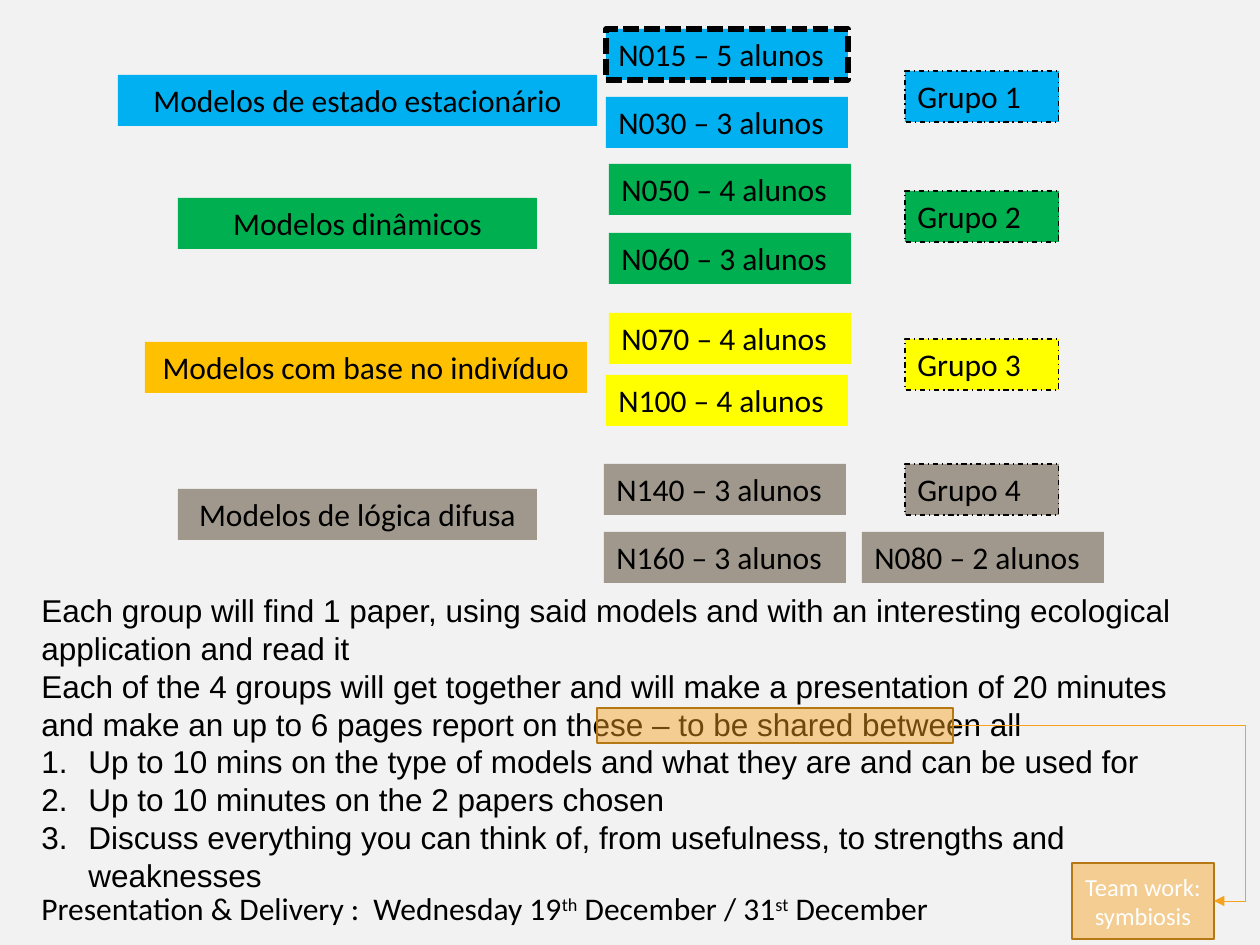
from lxml.etree import SubElement
from pptx import Presentation
from pptx.dml.color import RGBColor
from pptx.enum.dml import MSO_LINE
from pptx.enum.shapes import MSO_CONNECTOR, MSO_SHAPE
from pptx.enum.text import MSO_ANCHOR, MSO_AUTO_SIZE, PP_ALIGN
from pptx.oxml.ns import qn
from pptx.util import Emu, Pt

PX = 914400 // 126
BLUE, GREEN, YELLOW, ORANGE, GREY = "00B0F0", "00B050", "FFFF00", "FFC000", "A0988C"
BLACK, WHITE, AMBER, BROWN = "000000", "FFFFFF", "F6A21D", "B67815"
LABEL_H, CLASS_W, GROUP_X, GROUP_W = 51, 242, 905, 154

# Content: text, left, top, width, fill
models = [
    ("Modelos de estado estacionário", 118, 75, 479, BLUE),
    ("Modelos dinâmicos", 178, 198, 359, GREEN),
    ("Modelos com base no indivíduo", 145, 342, 442, ORANGE),
    ("Modelos de lógica difusa", 178, 489, 359, GREY),
]
# Content: text, left, top, fill
classes = [
    ("N030 – 3 alunos", 606, 97, BLUE),
    ("N050 – 4 alunos", 609, 164, GREEN),
    ("N060 – 3 alunos", 609, 233, GREEN),
    ("N070 – 4 alunos", 609, 313, YELLOW),
    ("N100 – 4 alunos", 606, 375, YELLOW),
    ("N140 – 3 alunos", 604, 464, GREY),
    ("N160 – 3 alunos", 604, 532, GREY),
    ("N080 – 2 alunos", 862, 532, GREY),
]
lead_class = ("N015 – 5 alunos", 606, 29, BLUE)
# Content: top, fill
groups = [(71, BLUE), (191, GREEN), (339, YELLOW), (464, GREY)]

instructions = [
    "Each group will find 1 paper, using said models and with an interesting "
    "ecological application and read it",
    "Each of the 4 groups will get together and will make a presentation of 20 minutes "
    "and make an up to 6 pages report on these – to be shared between all",
]
steps = [
    "Up to 10 mins on the type of models and what they are and can be used for",
    "Up to 10 minutes on the 2 papers chosen",
    "Discuss everything you can think of, from usefulness, to strengths and weaknesses",
]
# Content: text, superscript
delivery = [
    ("Presentation & Delivery :  Wednesday 19", False), ("th", True),
    (" December / 31", False), ("st", True), (" December", False),
]


def px(*lengths):
    return [Emu(length * PX) for length in lengths]


def color(value):
    return RGBColor.from_string(value)


def add_run(paragraph, text, font="Calibri", size=18, ink=BLACK):
    run = paragraph.add_run()
    run.text = text
    run.font.name, run.font.size = font, Pt(size)
    run.font.color.rgb = color(ink)
    return run


def add_box(place, fill, text="", align=PP_ALIGN.LEFT, line=None, width=1, dash=None,
            anchor=MSO_ANCHOR.TOP, size=18, ink=BLACK):
    box = slide.shapes.add_shape(MSO_SHAPE.RECTANGLE, *px(*place))
    box.shadow.inherit = False
    box.fill.solid()
    box.fill.fore_color.rgb = color(fill)
    if line:
        box.line.color.rgb = color(line)
        box.line.width = Pt(width)
        if dash:
            box.line.dash_style = dash
    else:
        box.line.fill.background()
    if text:
        frame = box.text_frame
        frame.word_wrap = True
        frame.vertical_anchor = anchor
        frame.paragraphs[0].alignment = align
        add_run(frame.paragraphs[0], text, size=size, ink=ink)
    return box


def add_note(*place):
    note = slide.shapes.add_textbox(*px(*place)).text_frame
    note.word_wrap = True
    note.auto_size = MSO_AUTO_SIZE.SHAPE_TO_FIT_TEXT
    return note


def make_translucent(box, percent):
    fill_color = box._element.spPr.find(qn("a:solidFill"))[0]
    SubElement(fill_color, qn("a:alpha"), val=str(percent * 1000))


prs = Presentation()
prs.slide_width, prs.slide_height = px(1260, 945)
slide = prs.slides.add_slide(prs.slide_layouts[6])
slide.background.fill.solid()
slide.background.fill.fore_color.rgb = color("F2F2F2")

# Instructions with numbered steps
task = add_note(29, 585, 1201, 280)
for i, text in enumerate(instructions + steps):
    paragraph = task.add_paragraph() if i else task.paragraphs[0]
    add_run(paragraph, text, font="Arial")
    if text in steps:
        props = paragraph._p.get_or_add_pPr()
        props.set("marL", str(47 * PX))
        props.set("indent", str(-47 * PX))
        SubElement(props, qn("a:buFont"), typeface="+mj-lt")
        SubElement(props, qn("a:buAutoNum"), type="arabicPeriod")

# Highlight over the shared report
highlight = add_box((597, 708, 356, 35), AMBER, line=BROWN)

# Model types, classes and groups
for text, left, top, width, fill in models:
    add_box((left, top, width, LABEL_H), fill, text, PP_ALIGN.CENTER)
for text, left, top, fill in classes:
    add_box((left, top, CLASS_W, LABEL_H), fill, text)
text, left, top, fill = lead_class
add_box((left, top, CLASS_W, LABEL_H), fill, text,
        line=BLACK, width=3, dash=MSO_LINE.SQUARE_DOT)
for number, (top, fill) in enumerate(groups, 1):
    add_box((GROUP_X, top, GROUP_W, LABEL_H), fill, f"Grupo {number}",
            line=BLACK, width=0.75, dash=MSO_LINE.DASH_DOT)

# Delivery dates
dates = add_note(29, 883, 974, 51).paragraphs[0]
for text, raised in delivery:
    run = add_run(dates, text)
    if raised:
        run.font._element.set("baseline", "30000")

# Team work remark, tied to the highlight
teamwork = add_box((1072, 863, 142, 76), AMBER, "Team work: symbiosis", PP_ALIGN.CENTER,
                   line=BROWN, anchor=MSO_ANCHOR.MIDDLE, size=14, ink=WHITE)
for box in (highlight, teamwork):
    make_translucent(box, 45)

link = slide.shapes.add_connector(MSO_CONNECTOR.ELBOW, *px(953, 725, 1214, 901))
link.begin_connect(highlight, 3)
link.end_connect(teamwork, 3)
link.line.color.rgb = color(AMBER)
link.line.width = Pt(0.5)
link_props = link._element.spPr
SubElement(link_props.find(qn("a:ln")), qn("a:tailEnd"), type="triangle")
SubElement(link_props, qn("a:effectLst"))
bend = link_props.find(qn("a:prstGeom")).find(qn("a:avLst"))
SubElement(bend, qn("a:gd"), name="adj1", fmla="val 112100")

prs.save("out.pptx")
